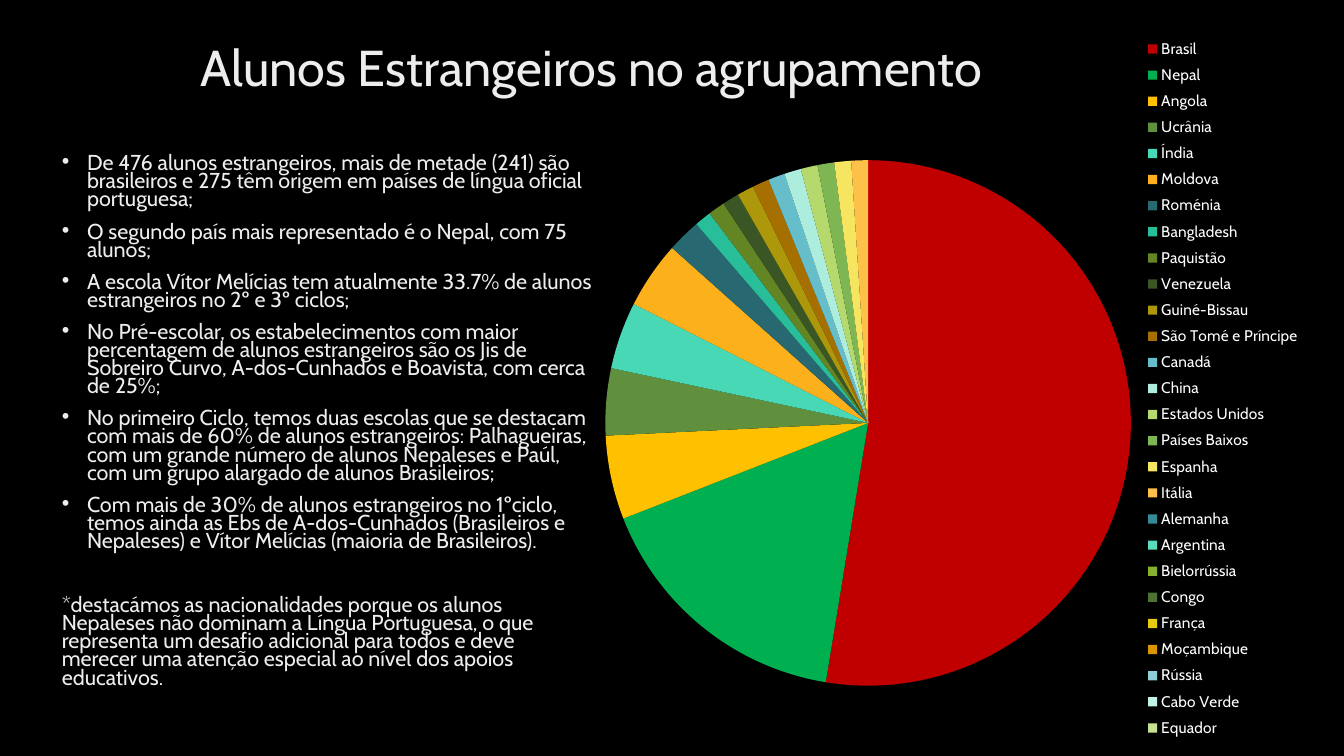
from lxml.etree import SubElement
from pptx import Presentation
from pptx.chart.data import CategoryChartData
from pptx.dml.color import RGBColor
from pptx.enum.chart import XL_CHART_TYPE as ChartType, XL_LEGEND_POSITION as LegendPosition
from pptx.enum.text import MSO_ANCHOR as Anchor, MSO_AUTO_SIZE as AutoSize, PP_ALIGN as Align
from pptx.oxml import parse_xml
from pptx.oxml.ns import nsdecls, qn
from pptx.util import Pt

TITLE = "Alunos Estrangeiros no agrupamento"
FINDINGS = [
    "De 476 alunos estrangeiros, mais de metade (241) são brasileiros e 275 têm origem em países de língua oficial portuguesa;",
    "O segundo país mais representado é o Nepal, com 75 alunos;",
    "A escola Vítor Melícias tem atualmente 33.7% de alunos estrangeiros no 2º e 3º ciclos;",
    "No Pré-escolar, os estabelecimentos com maior percentagem de alunos estrangeiros são os Jis de Sobreiro Curvo, A-dos-Cunhados e Boavista, com cerca de 25%;",
    "No primeiro Ciclo, temos duas escolas que se destacam com mais de 60% de alunos estrangeiros: Palhagueiras, com um grande número de alunos Nepaleses e Paúl, com um grupo alargado de alunos Brasileiros;",
    "Com mais de 30% de alunos estrangeiros no 1ºciclo, temos ainda as Ebs de A-dos-Cunhados (Brasileiros e Nepaleses) e Vítor Melícias (maioria de Brasileiros).",
]
FOOTNOTE = "*destacámos as nacionalidades porque os alunos Nepaleses não dominam a Língua Portuguesa, o que representa um desafio adicional para todos e deve merecer uma atenção especial ao nível dos apoios educativos."
COUNTRIES = [
    ("Brasil", 51, "C00000"),
    ("Nepal", 16, "00B050"),
    ("Angola", 5, "FFC000"),
    ("Ucrânia", 4, "608F3D"),
    ("Índia", 4, "48D8B5"),
    ("Moldova", 4, "FCB11C"),
    ("Roménia", 2, "276871"),
    ("Bangladesh", 1, "28BE9A"),
    ("Paquistão", 1, "648523"),
    ("Venezuela", 1, "3A5625"),
    ("Guiné-Bissau", 1, "AC980A"),
    ("São Tomé e Príncipe", 1, "A66F02"),
    ("Canadá", 1, "67BECB"),
    ("China", 1, "ACEDDD"),
    ("Estados Unidos", 1, "B5D96D"),
    ("Países Baixos", 1, "7DB653"),
    ("Espanha", 1, "F6E561"),
    ("Itália", 1, "FDC149"),
    ("Alemanha", 0, "348B97"),
    ("Argentina", 0, "58DCBB"),
    ("Bielorrússia", 0, "85B12F"),
    ("Congo", 0, "4D7231"),
    ("França", 0, "E5CB0D"),
    ("Moçambique", 0, "DD9403"),
    ("Rússia", 0, "8DCFD8"),
    ("Cabo Verde", 0, "C1F2E6"),
    ("Equador", 0, "C7E292"),
]
COLORS = {"background": "000000", "text": "EDEDED", "chart_text": "FFFFFF"}
FONT = "Cabin"
TITLE_BOX = (37, 11, 771, 78)
BODY_BOX = (37, 108, 394, 404)
CHART_BOX = (362, 11.5, 582, 528.5)
PLOT_LAYOUT = (0.121, 0.143, 0.645, 0.814)
LEGEND_LAYOUT = (0.774, 0.022, 0.21, 0.964)


def rgb(name):
    return RGBColor.from_string(COLORS[name])


def style_font(font, size, color):
    font.name, font.size = FONT, Pt(size)
    font.color.rgb = rgb(color)


def place(shape, box):
    shape.left, shape.top, shape.width, shape.height = map(Pt, box)


def set_bullet(para, bulleted):
    properties = para._p.get_or_add_pPr()
    indent = Pt(18) if bulleted else 0
    properties.set("marL", str(indent))
    properties.set("indent", str(-indent))
    if bulleted:
        SubElement(properties, qn("a:buChar")).set("char", "•")
    else:
        SubElement(properties, qn("a:buNone"))


def manual_layout(box, target=""):
    modes = '<c:xMode val="edge"/><c:yMode val="edge"/>'
    sizes = "".join(f'<c:{key} val="{value}"/>' for key, value in zip("xywh", box))
    return parse_xml(f'<c:layout {nsdecls("c")}><c:manualLayout>{target}{modes}{sizes}'
                     '</c:manualLayout></c:layout>')


def set_layout(element, layout, position):
    for old in element.findall(qn("c:layout")):
        element.remove(old)
    element.insert(position, layout)


def add_title(slide):
    title = slide.shapes.title
    place(title, TITLE_BOX)
    frame = title.text_frame
    frame.text = TITLE
    frame.auto_size = AutoSize.NONE
    frame.vertical_anchor = Anchor.MIDDLE
    para = frame.paragraphs[0]
    para.alignment = Align.CENTER
    para.line_spacing = 0.9
    style_font(para.font, 36, "text")


def add_findings(slide):
    body = slide.placeholders[1]
    place(body, BODY_BOX)
    frame = body.text_frame
    frame.text = "\n".join(FINDINGS + [FOOTNOTE])
    frame.auto_size = AutoSize.NONE
    frame.vertical_anchor = Anchor.TOP
    last = len(FINDINGS)
    for index, para in enumerate(frame.paragraphs):
        set_bullet(para, index < last)
        para.line_spacing = 0.7
        para.space_before = Pt({0: 0, last: 33}.get(index, 10))
        style_font(para.font, 15.4, "text")


def add_pie(slide):
    names, percentages, colors = zip(*COUNTRIES)
    data = CategoryChartData(number_format="0")
    data.categories = names
    data.add_series("Series 1", percentages)
    chart = slide.shapes.add_chart(ChartType.PIE, *map(Pt, CHART_BOX), data).chart
    chart.has_title = False
    style_font(chart.font, 10, "chart_text")
    plot = chart.plots[0]
    plot.vary_by_categories = True
    for index, color in enumerate(colors):
        slice_format = plot.series[0].points[index].format
        slice_format.fill.solid()
        slice_format.fill.fore_color.rgb = RGBColor.from_string(color)
        slice_format.line.fill.background()
    chart.has_legend = True
    legend = chart.legend
    legend.position = LegendPosition.BOTTOM
    legend.include_in_layout = False
    style_font(legend.font, 11, "chart_text")
    set_layout(legend._element, manual_layout(LEGEND_LAYOUT), 1)
    plot_area = chart._chartSpace.chart.plotArea
    set_layout(plot_area, manual_layout(PLOT_LAYOUT, '<c:layoutTarget val="inner"/>'), 0)


def main():
    deck = Presentation()
    deck.slide_width, deck.slide_height = Pt(960), Pt(540)
    slide = deck.slides.add_slide(deck.slide_layouts[1])
    slide.background.fill.solid()
    slide.background.fill.fore_color.rgb = rgb("background")
    add_title(slide)
    add_findings(slide)
    add_pie(slide)
    deck.save("out.pptx")


if __name__ == "__main__":
    main()
